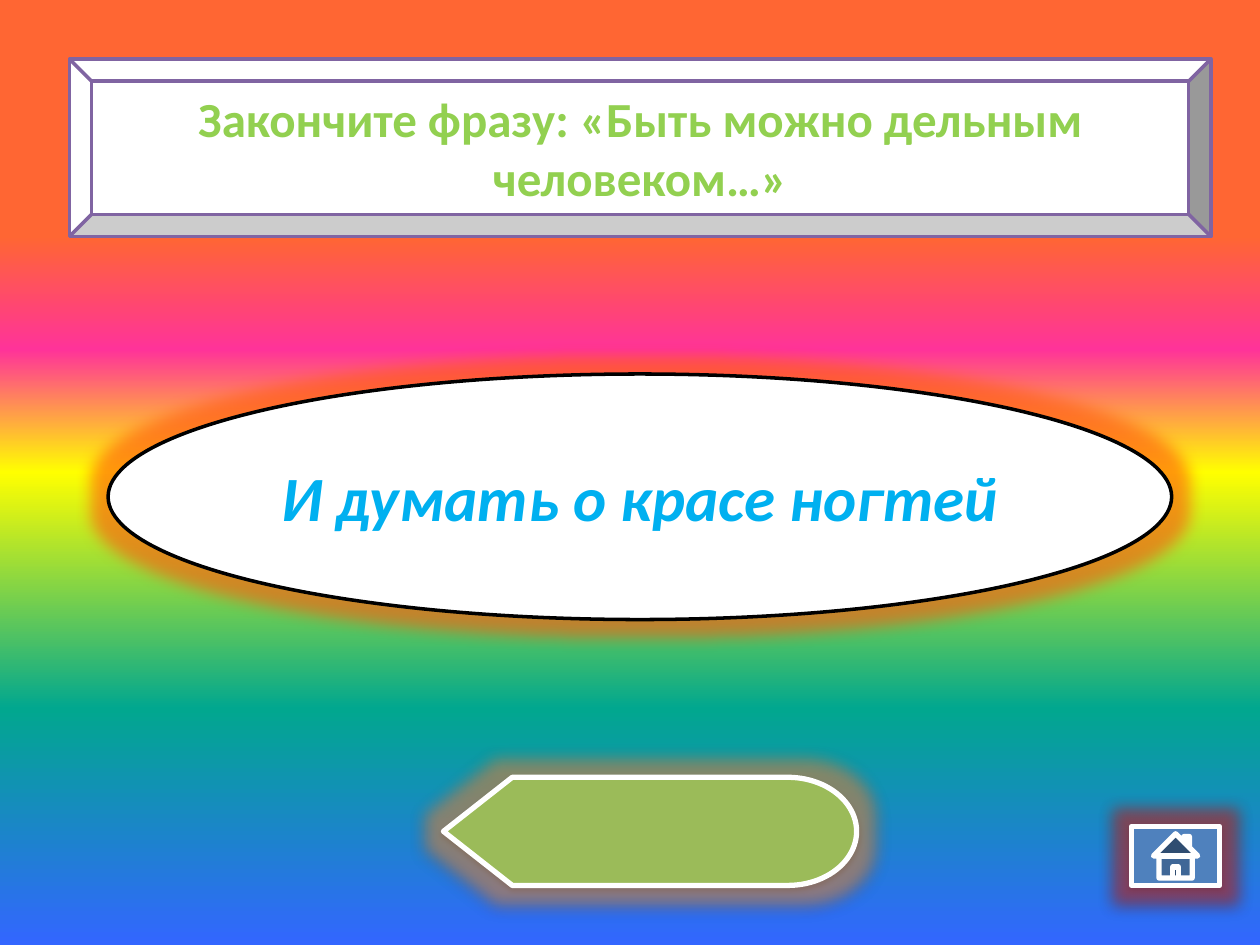
from lxml.etree import SubElement
from pptx import Presentation
from pptx.dml.color import RGBColor
from pptx.enum.shapes import MSO_SHAPE
from pptx.enum.text import MSO_ANCHOR, PP_ALIGN
from pptx.oxml.ns import qn
from pptx.util import Cm, Pt

WHITE = RGBColor(0xFF, 0xFF, 0xFF)
BLACK = RGBColor(0x00, 0x00, 0x00)
PURPLE = RGBColor(0x80, 0x64, 0xA2)
OLIVE = RGBColor(0x9B, 0xBB, 0x59)
BLUE = RGBColor(0x4F, 0x81, 0xBD)
LIME = RGBColor(0x92, 0xD0, 0x50)
SKY = RGBColor(0x00, 0xB0, 0xF0)
ORANGE = RGBColor(0xF7, 0x96, 0x46)
SCARLET = RGBColor(0xFF, 0x55, 0x11)
RED = RGBColor(0xC0, 0x30, 0x30)

# Content
QUESTION = "Закончите фразу: «Быть можно дельным человеком…»"
ANSWER = "И думать о красе ногтей"
RAINBOW = [
    (0, RGBColor(0xFF, 0x66, 0x33)),
    (25, RGBColor(0xFF, 0x66, 0x33)),
    (37, RGBColor(0xFF, 0x33, 0x99)),
    (50, RGBColor(0xFF, 0xFF, 0x00)),
    (75, RGBColor(0x01, 0xA7, 0x8F)),
    (100, RGBColor(0x33, 0x66, 0xFF)),
]


def add_color(parent, color, alpha=100):
    node = SubElement(parent, qn("a:srgbClr"), val=str(color))
    if alpha < 100:
        SubElement(node, qn("a:alpha"), val=str(alpha * 1000))


def paint_background(slide, stops):
    fill = slide.background.fill
    fill.gradient()
    fill.gradient_angle = 270  # counter-clockwise, so top to bottom
    stop_list = next(slide.element.iter(qn("a:gsLst")))
    for old_stop in list(stop_list):
        stop_list.remove(old_stop)
    for position, color in stops:
        stop = SubElement(stop_list, qn("a:gs"), pos=str(position * 1000))
        add_color(stop, color)


def add_figure(slide, kind, place, fill, line, width,
               glow=None, glow_alpha=50, shadow=False):
    left, top, wide, high = (Cm(length) for length in place)
    shape = slide.shapes.add_shape(kind, left, top, wide, high)
    shape.shadow.inherit = False
    shape.fill.solid()
    shape.fill.fore_color.rgb = fill
    shape.line.color.rgb = line
    shape.line.width = Pt(width)
    effects = shape.element.spPr.find(qn("a:effectLst"))
    if glow is not None:
        halo = SubElement(effects, qn("a:glow"), rad=str(Pt(18)))
        add_color(halo, glow, glow_alpha)
    if shadow:
        cast = SubElement(effects, qn("a:outerShdw"), blurRad=str(Pt(3.1)),
                          dist=str(Pt(1.6)), dir="5400000", rotWithShape="0")
        add_color(cast, BLACK, 38)
    return shape


def write_text(shape, text, size, color, italic=False):
    frame = shape.text_frame
    frame.word_wrap = True
    frame.vertical_anchor = MSO_ANCHOR.MIDDLE
    frame.margin_top = frame.margin_bottom = Cm(0)
    para = frame.paragraphs[0]
    para.alignment = PP_ALIGN.CENTER
    span = para.add_run()
    span.text = text
    span.font.name = "Calibri"
    span.font.size = Pt(size)
    span.font.bold = True
    span.font.italic = italic
    span.font.color.rgb = color


def main():
    deck = Presentation()
    deck.slide_width, deck.slide_height = Cm(25.4), Cm(19.05)
    page = deck.slides.add_slide(deck.slide_layouts[6])
    paint_background(page, RAINBOW)

    # Question, centred on the inner face of the bevelled frame
    question = add_figure(page, MSO_SHAPE.BEVEL, (1.4, 1.19, 23.01, 3.58),
                          WHITE, PURPLE, 2)
    write_text(question, QUESTION, 28, LIME)

    # Back button
    add_figure(page, MSO_SHAPE.FLOWCHART_DISPLAY, (8.94, 15.67, 8.33, 2.18),
               OLIVE, WHITE, 3, glow=ORANGE, shadow=True)

    # Answer
    answer = add_figure(page, MSO_SHAPE.FLOWCHART_CONNECTOR,
                        (2.18, 7.54, 21.44, 4.95), WHITE, BLACK, 2,
                        glow=SCARLET, glow_alpha=60)
    write_text(answer, ANSWER, 36, SKY, italic=True)

    # Home button
    add_figure(page, MSO_SHAPE.ACTION_BUTTON_HOME, (22.81, 16.66, 1.78, 1.19),
               BLUE, WHITE, 3, glow=RED, glow_alpha=60, shadow=True)

    deck.save("out.pptx")


if __name__ == "__main__":
    main()
